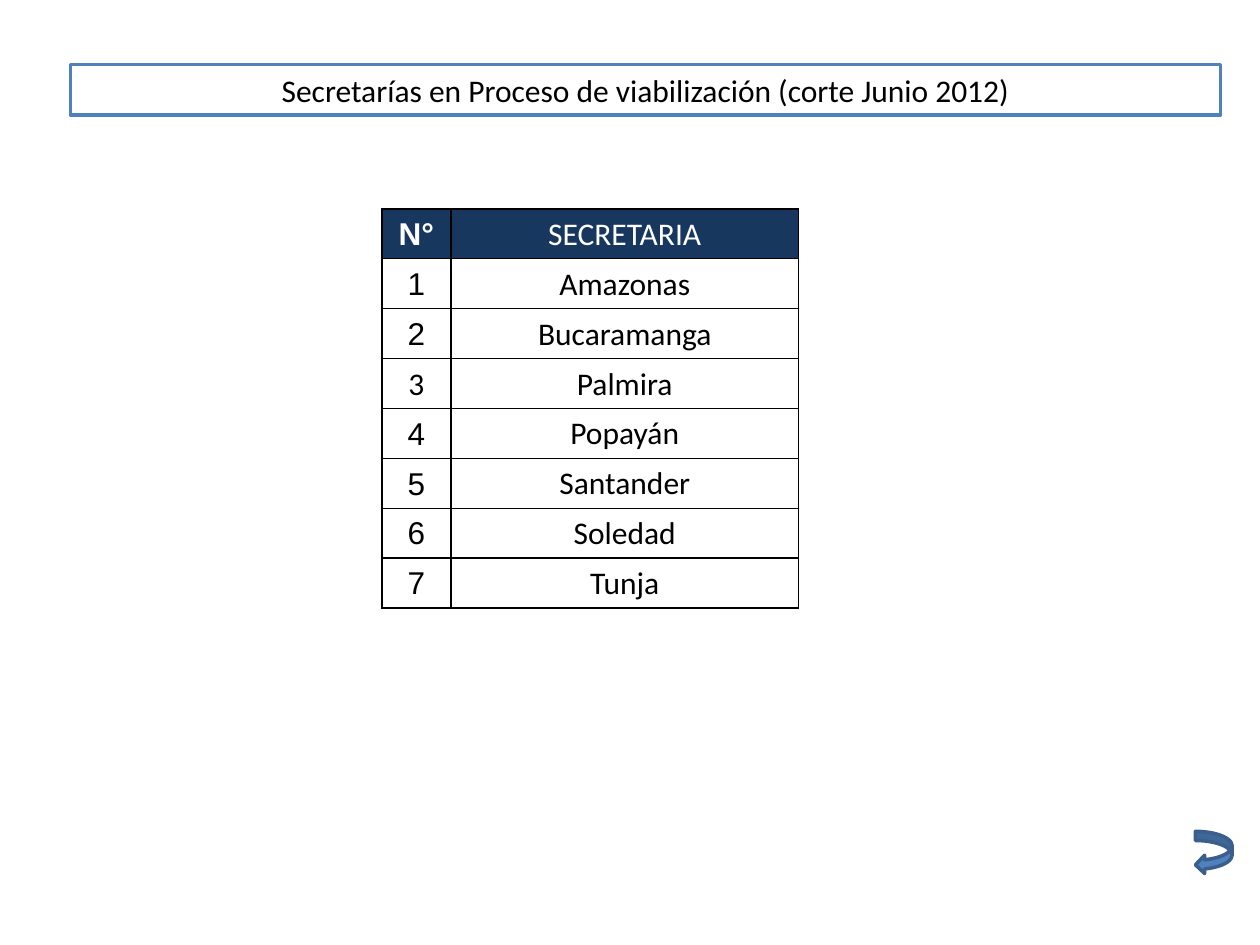
from lxml import etree
from pptx import Presentation
from pptx import util as u
from pptx.dml.color import RGBColor
from pptx.enum import shapes, text
from pptx.oxml import ns


def color(hex_value):
    return RGBColor.from_string(hex_value)


def write(frame, words, font, hex_value, bold=False):
    frame.text = words
    paragraph = frame.paragraphs[0]
    paragraph.alignment = text.PP_ALIGN.CENTER
    run_font = paragraph.runs[0].font
    run_font.name, run_font.size, run_font.bold = font, u.Pt(18), bold
    run_font.color.rgb = color(hex_value)


deck = Presentation()
deck.slide_width, deck.slide_height = u.Cm(25.4), u.Cm(19.05)
slide = deck.slides.add_slide(deck.slide_layouts[6])

# Heading
heading = slide.shapes.add_shape(
    shapes.MSO_SHAPE.RECTANGLE, u.Cm(1.42), u.Cm(1.3), u.Cm(23.19), u.Cm(1.02))
heading.shadow.inherit = False
heading.fill.solid()
heading.fill.fore_color.rgb = color("FFFFFF")
heading.line.color.rgb = color("4F81BD")
heading.line.width = u.Pt(2)
write(heading.text_frame,
      "Secretarías en Proceso de viabilización (corte Junio 2012)",
      "Calibri", "000000")

# Table of secretariats
secretariats = ["Amazonas", "Bucaramanga", "Palmira", "Popayán",
                "Santander", "Soledad", "Tunja"]
rows = [("N°", "SECRETARIA")]
rows += [(str(n), name) for n, name in enumerate(secretariats, 1)]
row_height = u.Cm(1.007)
table = slide.shapes.add_table(
    len(rows), 2, u.Cm(7.7), u.Cm(4.21), u.Cm(8.4), row_height * len(rows)).table
table.first_row = table.horz_banding = False
table.columns[0].width, table.columns[1].width = u.Cm(1.39), u.Cm(7.01)

for r, row in enumerate(rows):
    table.rows[r].height = row_height
    for c, words in enumerate(row):
        cell = table.cell(r, c)
        is_header = r == 0
        # The number 3 is set in Calibri, the other numbers in Arial
        font = "Arial" if c == 0 and words != "3" else "Calibri"
        write(cell.text_frame, words, font,
              "FFFFFF" if is_header else "000000", is_header and c == 0)
        cell.vertical_anchor = text.MSO_ANCHOR.MIDDLE
        cell.margin_left = cell.margin_right = cell.margin_top = u.Cm(0.03)
        cell.margin_bottom = 0

        # Borders come before the fill in the cell properties
        properties = cell._tc.get_or_add_tcPr()
        for side in ("a:lnL", "a:lnR", "a:lnT", "a:lnB"):
            border = etree.SubElement(properties, ns.qn(side), w=str(u.Pt(1)))
            paint = etree.SubElement(border, ns.qn("a:solidFill"))
            etree.SubElement(paint, ns.qn("a:srgbClr"), val="000000")
        if is_header:
            cell.fill.solid()
            cell.fill.fore_color.rgb = color("17375E")
        else:
            cell.fill.background()

# Return arrow
back_arrow = slide.shapes.add_shape(
    shapes.MSO_SHAPE.CURVED_LEFT_ARROW,
    u.Cm(24.1), u.Cm(16.76), u.Cm(0.74), u.Cm(0.86))
back_arrow.shadow.inherit = False
back_arrow.fill.solid()
back_arrow.fill.fore_color.rgb = color("4F81BD")
back_arrow.line.color.rgb = color("3A5F8C")
back_arrow.line.width = u.Pt(2)

deck.save("out.pptx")
